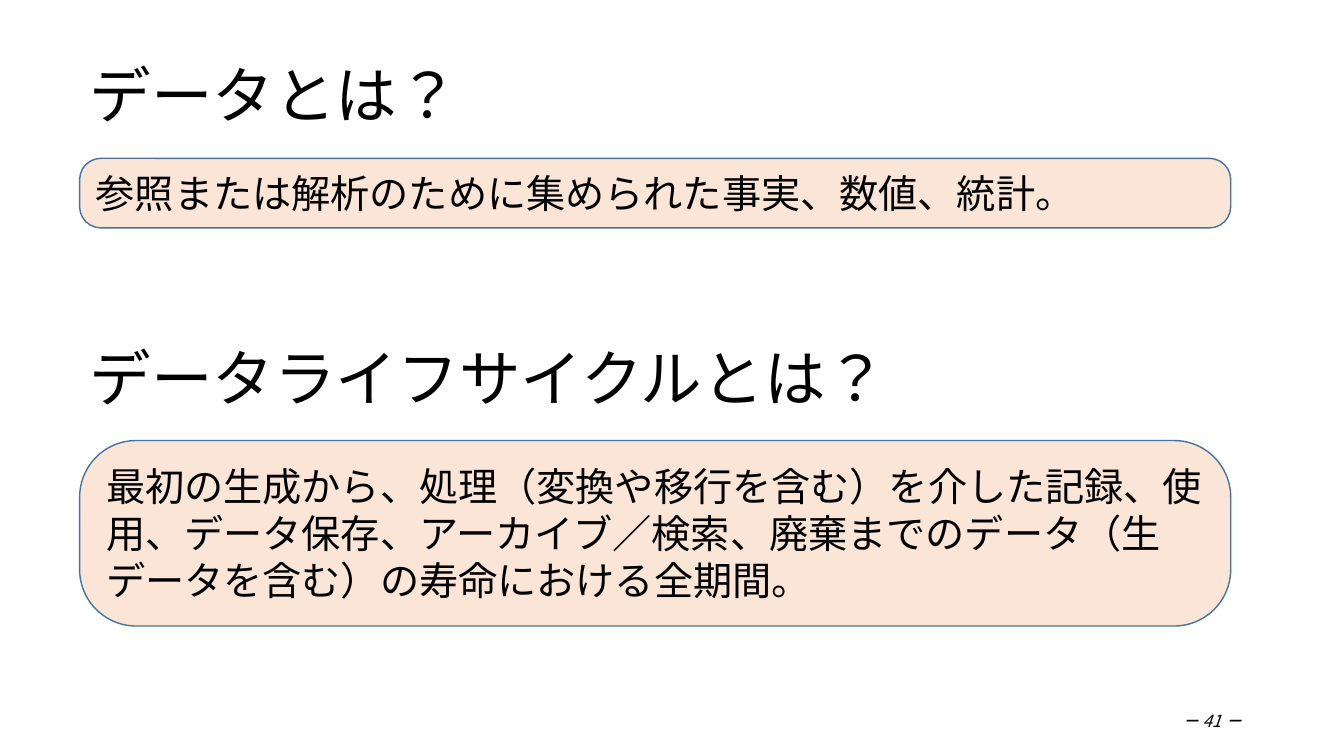
from lxml import etree
from pptx import Presentation
from pptx.dml.color import RGBColor
from pptx.enum.lang import MSO_LANGUAGE_ID
from pptx.enum.shapes import MSO_SHAPE
from pptx.enum.text import MSO_ANCHOR, MSO_AUTO_SIZE, PP_ALIGN
from pptx.oxml.ns import qn
from pptx.util import Pt

COLORS = {"text": "000000", "box": "FBE5D6", "border": "43739E"}
JAPANESE_FONT = "Noto Sans CJK JP"
LEFT, WIDTH = 56.9, 822.2
FIRST_TOP, SECTION_STEP, HEADING_HEIGHT = 28.1, 201.6, 85
SECTIONS = [
    ("データとは？", "参照または解析のために集められた事実、数値、統計。", "Arial", 49.7),
    (
        "データライフサイクルとは？",
        "最初の生成から、処理（変換や移行を含む）を介した記録、使用、データ保存、"
        "アーカイブ／検索、廃棄までのデータ（生データを含む）の寿命における全期間。",
        JAPANESE_FONT,
        132.5,
    ),
]


def rgb(name):
    return RGBColor.from_string(COLORS[name])


def add_run(p, text, **formats):
    r = p.add_run()
    r.text = text
    r.font.color.rgb = rgb("text")
    r.font.language_id = MSO_LANGUAGE_ID.JAPANESE
    for name, value in formats.items():
        setattr(r.font, name, value)
    east_asian = etree.Element(qn("a:ea"), typeface=JAPANESE_FONT)
    r.font._element.find(qn("a:latin")).addnext(east_asian)
    return r


def outline_run(r):
    ln = etree.Element(qn("a:ln"), w=str(Pt(0.75)))
    fill = etree.SubElement(ln, qn("a:solidFill"))
    etree.SubElement(fill, qn("a:srgbClr"), val=COLORS["text"])
    r.font._element.insert(0, ln)


def add_text_box(s, left, top, width, height):
    """Add an empty, vertically centred text box and return its paragraph."""
    tf = s.shapes.add_textbox(Pt(left), Pt(top), Pt(width), Pt(height)).text_frame
    tf.word_wrap = True
    tf.vertical_anchor = MSO_ANCHOR.MIDDLE
    return tf.paragraphs[0]


def add_heading(s, text, top):
    p = add_text_box(s, LEFT, top, WIDTH, HEADING_HEIGHT)
    p.line_spacing = 0.9
    add_run(p, text, name="Calibri", size=Pt(44))


def add_definition(s, text, font, top, height):
    sp = s.shapes.add_shape(
        MSO_SHAPE.ROUNDED_RECTANGLE, Pt(LEFT), Pt(top), Pt(WIDTH), Pt(height)
    )
    sp.adjustments[0] = 0.305
    sp.shadow.inherit = False
    sp.fill.solid()
    sp.fill.fore_color.rgb = rgb("box")
    sp.line.color.rgb = rgb("border")
    sp.line.width = Pt(1)
    tf = sp.text_frame
    tf.word_wrap = True
    tf.auto_size = MSO_AUTO_SIZE.SHAPE_TO_FIT_TEXT
    tf.vertical_anchor = MSO_ANCHOR.TOP
    p = tf.paragraphs[0]
    p.alignment = PP_ALIGN.LEFT
    p.space_after = Pt(3)
    add_run(p, text, name=font, size=Pt(28))


def add_page_number(s, number):
    p = add_text_box(s, 678.2, 500.4, 216, 28.8)
    p.alignment = PP_ALIGN.RIGHT
    formats = {"name": JAPANESE_FONT, "size": Pt(12), "italic": True}
    add_run(p, "－ ", bold=True, **formats)
    outline_run(add_run(p, number, bold=False, **formats))
    add_run(p, " －", bold=True, **formats)


def main():
    prs = Presentation()
    prs.slide_width, prs.slide_height = Pt(960), Pt(540)
    s = prs.slides.add_slide(prs.slide_layouts[6])
    for i, (heading, definition, font, height) in enumerate(SECTIONS):
        top = FIRST_TOP + i * SECTION_STEP
        add_heading(s, heading, top)
        add_definition(s, definition, font, top + HEADING_HEIGHT, height)
    add_page_number(s, "41")
    prs.save("out.pptx")


if __name__ == "__main__":
    main()
